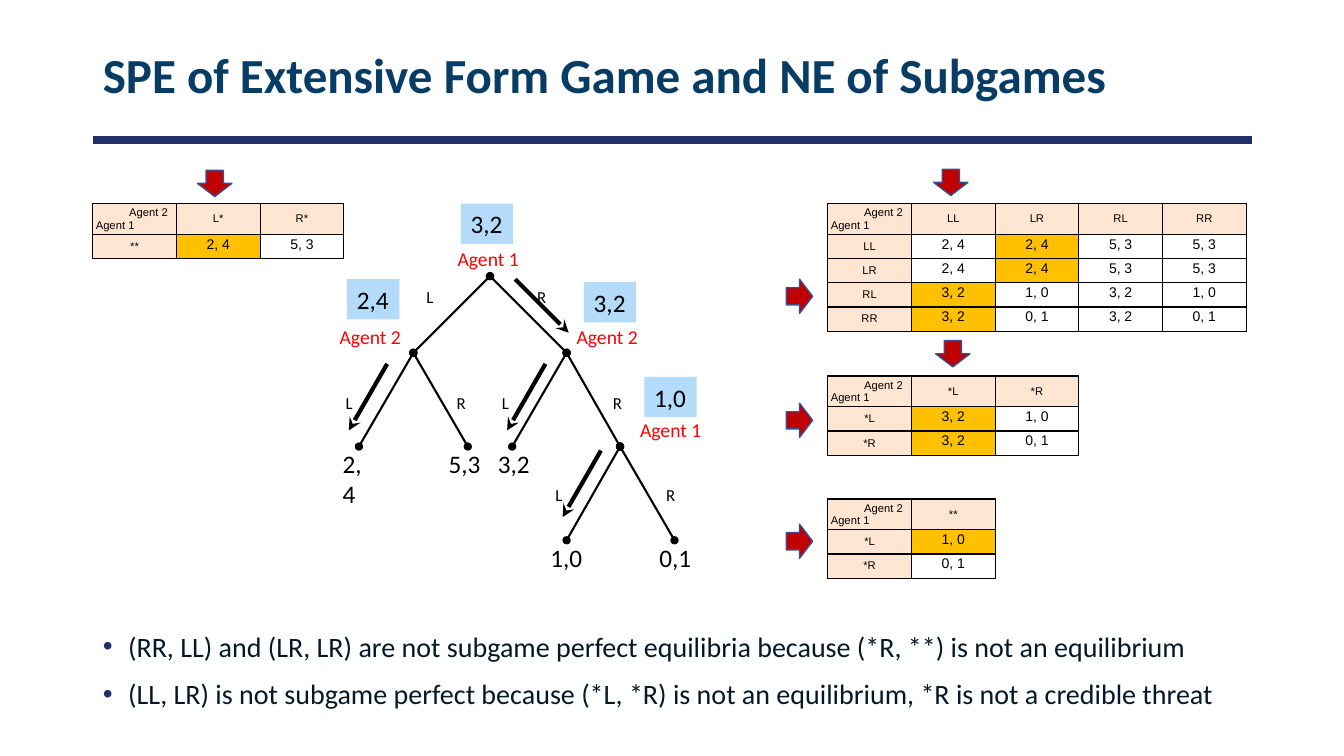
"""Slide on subgame perfect equilibria: a game tree, its payoff tables and two remarks."""
from lxml import etree
from pptx import Presentation
from pptx.dml import color
from pptx.enum import shapes, text
from pptx.oxml import ns, parse_xml
from pptx.util import Inches, Pt

hue = color.RGBColor.from_string


def link(x1, y1, x2, y2, tint, width, head=None, tail=None):
    """Draw a straight line with optional line ends."""
    line = slide.shapes.add_connector(
        shapes.MSO_CONNECTOR.STRAIGHT, Inches(x1), Inches(y1), Inches(x2), Inches(y2))
    line.line.color.rgb = hue(tint)
    line.line.width = Pt(width)
    for tag, kind in (("a:headEnd", head), ("a:tailEnd", tail)):
        if kind:
            etree.SubElement(line.line._get_or_add_ln(), ns.qn(tag), type=kind)
    etree.SubElement(line._element.spPr, ns.qn("a:effectLst"))


def note(words, x, y, w, h, size, tint="000000", fill=None, wrap=False):
    """Place a small text box."""
    box = slide.shapes.add_textbox(Inches(x), Inches(y), Inches(w), Inches(h))
    if fill:
        box.fill.solid()
        box.fill.fore_color.rgb = hue(fill)
    box.text_frame.word_wrap = wrap
    run = box.text_frame.paragraphs[0].add_run()
    run.text = words
    run.font.name, run.font.size = "Calibri", Pt(size)
    run.font.color.rgb = hue(tint)


deck = Presentation()
deck.slide_width, deck.slide_height = Inches(13.33), Inches(7.5)
slide = deck.slides.add_slide(deck.slide_layouts[1])
title, body = slide.placeholders
for holder, top in ((title, 0.23), (body, 6.19)):
    holder.left, holder.top = Inches(0.92), Inches(top)
    holder.width, holder.height = Inches(11.5), Inches(1.08)

frame = title.text_frame
frame.vertical_anchor = text.MSO_ANCHOR.MIDDLE
para = frame.paragraphs[0]
para.alignment = text.PP_ALIGN.LEFT
para.line_spacing = 0.9
run = para.add_run()
run.text = "SPE of Extensive Form Game and NE of Subgames"
run.font.name, run.font.size, run.font.bold = "Calibri", Pt(35), True
run.font.color.rgb = hue("073C65")

remarks = [
    "(RR, LL) and (LR, LR) are not subgame perfect equilibria because (*R, **) is not an equilibrium",
    "(LL, LR) is not subgame perfect because (*L, *R) is not an equilibrium, *R is not a credible threat",
]
frame = body.text_frame
for i, words in enumerate(remarks):
    para = frame.add_paragraph() if i else frame.paragraphs[0]
    para.space_before = Pt(10)
    props = para._p.get_or_add_pPr()
    props.set("marL", str(Inches(0.25)))
    props.set("indent", str(Inches(-0.25)))
    paint = etree.SubElement(props, ns.qn("a:buClr"))
    etree.SubElement(paint, ns.qn("a:srgbClr"), val="21306A")
    etree.SubElement(props, ns.qn("a:buChar"), char="•")
    run = para.add_run()
    run.text = words
    run.font.name, run.font.size = "Calibri", Pt(20)
    run.font.color.rgb = hue("031828")

link(0.92, 1.39, 12.42, 1.39, "21306A", 6)

for x, y, dx, dy in [(5.96, 4.47, -0.38, 0.66), (5.41, 3.61, -0.38, 0.66),
                     (3.84, 3.61, -0.38, 0.66), (5.11, 2.77, 0.53, 0.53)]:
    link(x, y, x + dx, y + dy, "000000", 3, tail="stealth")

for words, x, y in [("1,0", 6.39, 3.74), ("3,2", 5.79, 2.8),
                    ("2,4", 3.44, 2.77), ("3,2", 4.57, 2.02)]:
    note(words, x, y, 0.52, 0.4, 18, fill="B4DCFA")

# A trailing "!" marks a best response.
games = [
    (8.21, 2.02, ["|LL|LR|RL|RR", "LL|2, 4|2, 4!|5, 3|5, 3", "LR|2, 4|2, 4!|5, 3|5, 3",
                  "RL|3, 2!|1, 0|3, 2|1, 0", "RR|3, 2!|0, 1|3, 2|0, 1"]),
    (8.21, 4.95, ["|**", "*L|1, 0!", "*R|0, 1"]),
    (8.21, 3.73, ["|*L|*R", "*L|3, 2!|1, 0", "*R|3, 2!|0, 1"]),
    (0.92, 2.02, ["|L*|R*", "**|2, 4!|5, 3"]),
]
for x, y, lines in games:
    rows = [line.split("|") for line in lines]
    wide, high = 0.83 * len(rows[0]), 0.3 + 0.24 * (len(rows) - 1)
    table = slide.shapes.add_table(len(rows), len(rows[0]), Inches(x), Inches(y),
                                   Inches(wide), Inches(high)).table
    table.first_row = table.horz_banding = False
    for col in table.columns:
        col.width = Inches(0.83)
    for r, row in enumerate(rows):
        table.rows[r].height = Inches(0.24 if r else 0.3)
        for c, words in enumerate(row):
            cell = table.cell(r, c)
            label = r == 0 or c == 0
            cell.margin_left = cell.margin_right = Inches(0.03 if label else 0.05)
            cell.margin_top = cell.margin_bottom = Inches(0.02)
            cell.vertical_anchor = text.MSO_ANCHOR.MIDDLE if label else text.MSO_ANCHOR.TOP
            for side in ("lnL", "lnR", "lnT", "lnB"):
                cell._tc.get_or_add_tcPr().append(parse_xml(
                    f'<a:{side} {ns.nsdecls("a")} w="12700"><a:solidFill>'
                    f'<a:srgbClr val="000000"/></a:solidFill></a:{side}>'))
            cell.fill.solid()
            cell.fill.fore_color.rgb = hue(
                "FFE6D3" if label else "FFC000" if words.endswith("!") else "FFFFFF")
            for i, part in enumerate([words.rstrip("!")] if words else ["Agent 2", "Agent 1"]):
                para = cell.text_frame.add_paragraph() if i else cell.text_frame.paragraphs[0]
                para.alignment = text.PP_ALIGN.CENTER if words else text.PP_ALIGN.LEFT
                if part == "Agent 2":
                    para._p.get_or_add_pPr().set("marL", str(Inches(0.33)))
                if not label:
                    para.space_before = Pt(2)
                run = para.add_run()
                run.text = part
                run.font.name, run.font.size = "Arial", Pt(8 if label else 10)
                run.font.color.rgb = hue("000000")

for x, y, turn in [(7.8, 2.77, 0), (9.3, 1.64, 90), (2, 1.65, 90),
                   (9.32, 3.34, 90), (7.8, 4, 0), (7.8, 5.2, 0)]:
    mark = slide.shapes.add_shape(shapes.MSO_SHAPE.RIGHT_ARROW, Inches(x), Inches(y),
                                  Inches(0.26), Inches(0.34))
    mark.rotation = turn
    mark.shadow.inherit = False
    mark.fill.solid()
    mark.fill.fore_color.rgb = hue("C00000")
    mark.line.color.rgb = hue("3A4C94")
    mark.line.width = Pt(1)

root, left, right, last = (4.86, 2.74), (4.1, 3.5), (5.62, 3.5), (6.15, 4.43)
for start, end in [(root, left), (root, right), (left, (4.64, 4.43)), (right, (5.08, 4.43)),
                   (left, (3.56, 4.43)), (last, (5.62, 5.36)), (right, last),
                   (last, (6.69, 5.36))]:
    link(*start, *end, "000000", 1.5, "oval", "oval")

for words, x, y, w in [("2,4", 3.3, 4.4, 0.5), ("5,3", 4.35, 4.4, 0.52), ("3,2", 4.84, 4.4, 0.52),
                       ("1,0", 5.36, 5.33, 0.52), ("0,1", 6.44, 5.33, 0.52)]:
    note(words, x, y, w, 0.4, 18, wrap=True)
for words, x, y in [("Agent 1", 4.44, 2.4), ("Agent 2", 5.62, 3.17),
                    ("Agent 1", 6.25, 4.1), ("Agent 2", 3.27, 3.17)]:
    note(words, x, y, 0.83, 0.34, 14, "FF0000")
for x, y in [(4.13, 2.8), (4.88, 3.85), (3.33, 3.85), (5.41, 4.76)]:
    note("L", x, y, 0.28, 0.3, 12)
    note("R", x + 1.1, y, 0.3, 0.3, 12)

deck.save("out.pptx")
